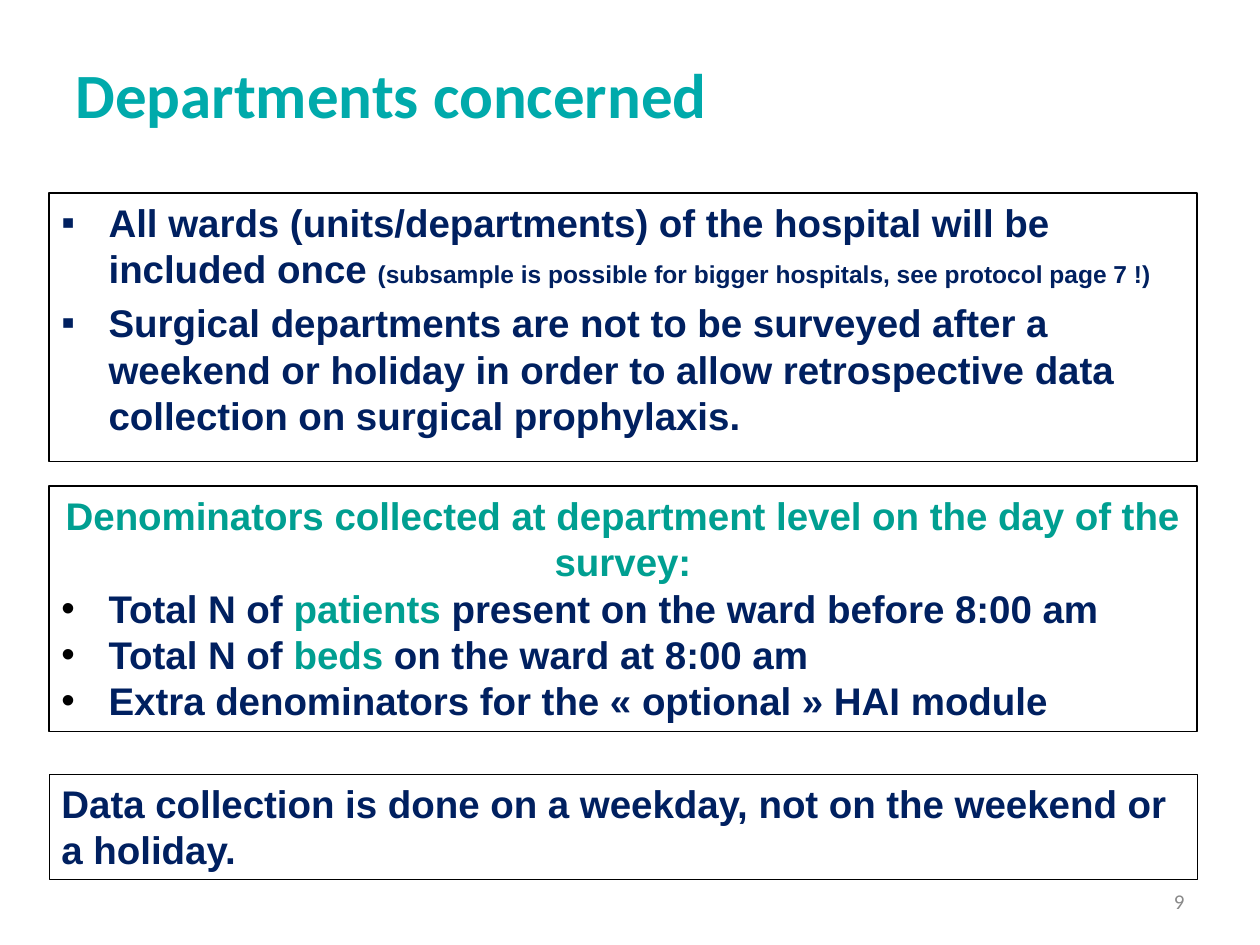
from dataclasses import dataclass

from lxml import etree
from pptx import Presentation
from pptx.dml.color import RGBColor
from pptx.enum.shapes import MSO_SHAPE
from pptx.enum.text import MSO_ANCHOR, MSO_AUTO_SIZE, PP_ALIGN
from pptx.oxml.ns import qn
from pptx.util import Cm, Pt

RECTANGLE = MSO_SHAPE.RECTANGLE
TOP, MIDDLE = MSO_ANCHOR.TOP, MSO_ANCHOR.MIDDLE
LEFT, CENTER, RIGHT = PP_ALIGN.LEFT, PP_ALIGN.CENTER, PP_ALIGN.RIGHT
FIXED, GROW = MSO_AUTO_SIZE.NONE, MSO_AUTO_SIZE.SHAPE_TO_FIT_TEXT

NAVY, GREEN, TURQUOISE = "002060", "009F91", "00AAAB"
BLACK, GREY = "000000", "898989"
BOX_LEFT, BOX_WIDTH = 0.99, 23.14
BULLET_INDENT = 0.95


@dataclass
class Run:
    text: str
    color: str = NAVY
    size: int = 22


@dataclass
class Line:
    runs: list[Run]
    bullet: str = ""
    bullet_color: str = BLACK
    align: PP_ALIGN = LEFT
    space_before: float = 0


@dataclass
class Box:
    top: float
    height: float
    border: float
    lines: list[Line]
    auto_size: MSO_AUTO_SIZE = GROW


BOXES = [
    # Which wards take part
    Box(3.89, 5.41, 0.75, [
        Line([Run("All wards (units/departments) of the hospital will be included once "),
              Run("(subsample is possible for bigger hospitals, see protocol page 7 !)", size=14)],
             "▪", NAVY),
        Line([Run("Surgical departments are not to be surveyed after a weekend or holiday "
                  "in order to allow retrospective data collection on surgical prophylaxis.")],
             "▪", NAVY, space_before=4.5),
    ], FIXED),
    # Denominators
    Box(9.8, 4.95, 0.75, [
        Line([Run("Denominators collected at department level on the day of the survey:", GREEN)],
             align=CENTER),
        Line([Run("Total N of "), Run("patients ", GREEN),
              Run("present on the ward before 8:00 am")], "•"),
        Line([Run("Total N of "), Run("beds ", GREEN), Run("on the ward at 8:00 am")], "•"),
        Line([Run("Extra denominators for the « optional » HAI module")], "•"),
    ]),
    # Timing
    Box(15.6, 2.13, 0.25, [
        Line([Run("Data collection is done on a weekday, not on the weekend or a holiday.")]),
    ]),
]


def rgb(color: str) -> RGBColor:
    return RGBColor.from_string(color)


def place(shape, left: float, top: float, width: float, height: float) -> None:
    shape.left, shape.top = Cm(left), Cm(top)
    shape.width, shape.height = Cm(width), Cm(height)


def add_bullet(paragraph, character: str, color: str) -> None:
    properties = paragraph._p.get_or_add_pPr()
    properties.set("marL", str(Cm(BULLET_INDENT)))
    properties.set("indent", str(-Cm(BULLET_INDENT)))
    bullet_color = etree.SubElement(properties, qn("a:buClr"))
    etree.SubElement(bullet_color, qn("a:srgbClr"), val=color)
    etree.SubElement(properties, qn("a:buFont"), typeface="Arial")
    etree.SubElement(properties, qn("a:buChar"), char=character)


def write_text(shape, lines: list[Line], *, font: str = "Arial", bold: bool = True,
               anchor: MSO_ANCHOR = TOP, auto_size: MSO_AUTO_SIZE = FIXED) -> None:
    frame = shape.text_frame
    frame.word_wrap = True
    frame.auto_size = auto_size
    frame.vertical_anchor = anchor
    for index, line in enumerate(lines):
        paragraph = frame.add_paragraph() if index else frame.paragraphs[0]
        if line.bullet:
            add_bullet(paragraph, line.bullet, line.bullet_color)
        paragraph.alignment = line.align
        paragraph.space_before = Pt(line.space_before)
        for part in line.runs:
            run = paragraph.add_run()
            run.text = part.text
            run.font.name = font
            run.font.size = Pt(part.size)
            run.font.bold = bold
            run.font.color.rgb = rgb(part.color)


def add_box(slide, box: Box) -> None:
    shape = slide.shapes.add_shape(RECTANGLE, Cm(BOX_LEFT), Cm(box.top),
                                   Cm(BOX_WIDTH), Cm(box.height))
    shape.shadow.inherit = False
    shape.fill.background()
    shape.line.color.rgb = rgb(BLACK)
    shape.line.width = Pt(box.border)
    write_text(shape, box.lines, auto_size=box.auto_size)


def main() -> None:
    presentation = Presentation()
    presentation.slide_width, presentation.slide_height = Cm(25.4), Cm(19.05)
    slide = presentation.slides.add_slide(presentation.slide_layouts[5])

    # Title
    title = slide.shapes.title
    place(title, 1.27, 0.76, 19.43, 2.26)
    write_text(title, [Line([Run("Departments concerned", TURQUOISE, 36)])],
               font="Calibri", anchor=MIDDLE)

    # Framed texts
    for box in BOXES:
        add_box(slide, box)

    # Page number
    number = slide.shapes.add_textbox(Cm(18.21), Cm(17.65), Cm(5.92), Cm(1.02))
    write_text(number, [Line([Run("9", GREY, 12)], align=RIGHT)],
               font="Calibri", bold=False, anchor=MIDDLE)

    presentation.save("out.pptx")


if __name__ == "__main__":
    main()
